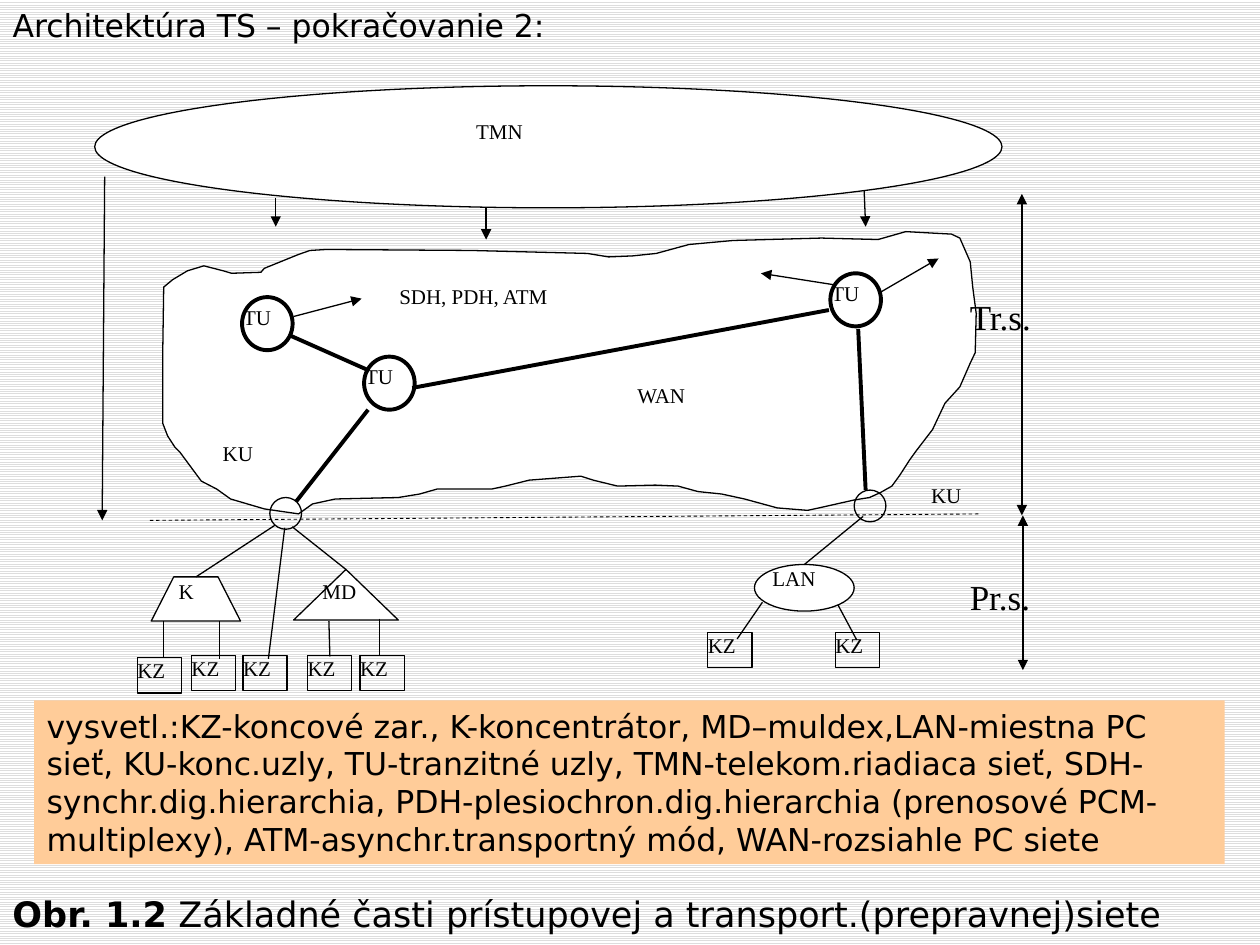
from lxml import etree
from pptx import Presentation
from pptx import util as u
from pptx.dml.color import RGBColor
from pptx.enum import dml, shapes, text
from pptx.oxml.ns import qn

BLACK, WHITE, PEACH, GREY = "000000", "FFFFFF", "FFCC99", "DDDDDD"
SERIF, SANS = "Times New Roman", "DejaVu Sans"
THIN, THICK = 0.75, 2.25
OVAL = shapes.MSO_SHAPE.OVAL
RECTANGLE = shapes.MSO_SHAPE.RECTANGLE

# Outline of the transport network cloud, clockwise from the upper left
CLOUD = [
    (1.3, 2.28), (1.37, 2.22), (1.49, 2.15), (1.62, 2.11), (1.77, 2.15),
    (1.84, 2.17), (2.07, 2.16), (2.1, 2.13), (2.37, 2.02), (2.46, 1.99),
    (2.59, 1.98), (3.74, 1.99), (4.66, 2.01), (4.83, 2.04), (5.02, 2.03),
    (5.21, 2.01), (5.47, 1.94), (5.82, 1.91), (6.52, 1.89), (6.97, 1.9),
    (7.19, 1.84), (7.4, 1.85), (7.55, 1.86), (7.62, 1.89), (7.7, 2.08),
    (7.72, 2.28), (7.75, 2.49), (7.74, 2.8), (7.7, 2.88), (7.62, 3.07),
    (7.5, 3.2), (7.4, 3.41), (7.27, 3.58), (7.22, 3.65), (7.14, 3.77),
    (7.08, 3.86), (6.99, 3.91), (6.9, 3.95), (6.78, 3.97), (6.5, 4.03),
    (6.41, 4.05), (6.17, 4.03), (5.91, 3.96), (5.73, 3.92), (5.54, 3.9),
    (5.38, 3.86), (5.2, 3.85), (4.9, 3.86), (4.71, 3.81), (4.61, 3.78),
    (4.2, 3.81), (4.01, 3.86), (3.9, 3.88), (3.47, 3.88), (3.33, 3.92),
    (3.16, 3.95), (2.66, 3.96), (2.48, 4), (2.37, 4.08), (2.1, 4.04),
    (1.83, 3.96), (1.72, 3.88), (1.6, 3.82), (1.43, 3.59), (1.39, 3.55),
    (1.33, 3.46), (1.29, 3.36), (1.29, 2.84), (1.3, 2.31),
]


def length(inches):
    return u.Cm(round(inches * 2.54, 2))


def color(code):
    return RGBColor.from_string(code)


def style_font(span, size, name, bold=False):
    span.font.size, span.font.name, span.font.bold = u.Pt(size), name, bold
    span.font.color.rgb = color(BLACK)


def write(frame, words, size, name):
    frame.text = words
    frame.word_wrap = True
    frame.vertical_anchor = text.MSO_ANCHOR.TOP
    para = frame.paragraphs[0]
    para.alignment = text.PP_ALIGN.LEFT
    for span in para.runs:
        style_font(span, size, name)
    return para


def finish(shape, fill=None, weight=None):
    shape.shadow.inherit = False
    if fill:
        shape.fill.solid()
        shape.fill.fore_color.rgb = color(fill)
    else:
        shape.fill.background()
    if weight:
        shape.line.color.rgb = color(BLACK)
        shape.line.width = u.Pt(weight)
    else:
        shape.line.fill.background()
    return shape


def add_figure(page, kind, place, fill=None, weight=THIN):
    shape = page.shapes.add_shape(kind, *map(length, place))
    return finish(shape, fill, weight)


def add_label(page, words, place, size=12, name=SERIF):
    box = page.shapes.add_textbox(*map(length, place))
    return write(box.text_frame, words, size, name)


def add_line(page, start, end, weight=THIN, heads=(), dashed=False, target=None):
    line = page.shapes.add_connector(
        shapes.MSO_CONNECTOR.STRAIGHT, *map(length, start + end))
    if target is not None:
        line.end_connect(target, 0)
    line.line.color.rgb = color(BLACK)
    line.line.width = u.Pt(weight)
    if dashed:
        line.line.dash_style = dml.MSO_LINE.DASH
    outline = line.line._get_or_add_ln()
    for head in heads:
        etree.SubElement(outline, qn(f"a:{head}"), type="triangle")
    etree.SubElement(line._element.spPr, qn("a:effectLst"))


def add_cloud(page):
    points = [(length(x), length(y)) for x, y in CLOUD]
    builder = page.shapes.build_freeform(*points[0])
    builder.add_line_segments(points[1:], close=True)
    finish(builder.convert_to_shape(), WHITE, THIN)


def add_terminal(page, left, top):
    box = add_figure(page, RECTANGLE, (left, top, 0.35, 0.28))
    frame = box.text_frame
    frame.margin_left = frame.margin_right = 0
    frame.margin_top = frame.margin_bottom = 0
    write(frame, "KZ", 12, SERIF)


def add_transport_network(page):
    add_cloud(page)
    add_figure(page, OVAL, (0.75, 0.68, 7.2, 0.97), WHITE)
    # Management arrows
    for start, end in [((2.19, 1.57), (2.19, 1.8)), ((3.86, 1.65), (3.86, 1.9)),
                       ((6.86, 1.51), (6.87, 1.8)), ((0.83, 1.4), (0.81, 4.13)),
                       ((2.33, 2.51), (2.87, 2.37)), ((6.62, 2.26), (6.04, 2.17)),
                       ((6.99, 2.32), (7.45, 2.05))]:
        add_line(page, start, end, heads=["tailEnd"])
    # Transit nodes and end nodes
    for left, top in [(2.89, 2.83), (1.92, 2.36), (6.59, 2.17)]:
        add_figure(page, OVAL, (left, top, 0.4, 0.42), weight=THICK)
        add_label(page, "TU", (left - 0.09, top + 0.01, 0.67, 0.49))
    for left, top in [(2.14, 3.95), (6.78, 3.89)]:
        add_figure(page, OVAL, (left, top, 0.25, 0.25))
    # Trunk links
    for start, end in [((2.3, 2.66), (2.93, 2.94)), ((3.27, 3.08), (6.58, 2.46)),
                       ((6.81, 2.61), (6.87, 3.89)), ((2.35, 3.98), (2.92, 3.25))]:
        add_line(page, start, end, THICK)
    for words, place in [("TMN", (3.68, 0.89, 0.87, 0.54)),
                         ("KU", (1.67, 3.45, 0.67, 0.4)),
                         ("KU", (7.29, 3.78, 0.67, 0.4)),
                         ("SDH, PDH, ATM", (3.07, 2.2, 2.18, 0.55)),
                         ("WAN", (4.96, 2.99, 0.87, 0.55))]:
        add_label(page, words, place)


def add_access_network(page):
    # Concentrator, muldex and local network
    concentrator = add_figure(
        page, shapes.MSO_SHAPE.TRAPEZOID, (1.2, 4.58, 0.71, 0.35), WHITE)
    concentrator.adjustments[0] = 0.51
    muldex = add_figure(
        page, shapes.MSO_SHAPE.ISOSCELES_TRIANGLE, (2.33, 4.52, 0.83, 0.4), WHITE)
    lan = add_figure(page, OVAL, (5.99, 4.48, 0.79, 0.37), WHITE)
    add_label(page, "K", (1.32, 4.54, 0.49, 0.4))
    add_label(page, "MD", (2.46, 4.54, 0.67, 0.53))
    add_label(page, "LAN", (6.03, 4.44, 0.86, 0.53))
    # Links from the end nodes
    add_line(page, (2.18, 4.17), (1.55, 4.58), target=concentrator)
    add_line(page, (2.32, 4.18), (2.74, 4.52), target=muldex)
    add_line(page, (6.85, 4.1), (6.39, 4.48), target=lan)
    # Terminals and their links
    for left, top in [(1.09, 5.22), (1.52, 5.2), (1.93, 5.2), (2.44, 5.2),
                      (2.86, 5.2), (5.62, 5.02), (6.63, 5.02)]:
        add_terminal(page, left, top)
    for start, end in [((1.3, 4.93), (1.3, 5.22)), ((1.74, 4.93), (1.74, 5.23)),
                       ((2.26, 4.19), (2.13, 5.23)), ((2.61, 4.93), (2.62, 5.21)),
                       ((3.01, 4.91), (3.01, 5.2)), ((6.05, 4.78), (5.85, 5.07)),
                       ((6.65, 4.8), (6.8, 5.08))]:
        add_line(page, start, end)


def add_ranges(page):
    add_line(page, (1.19, 4.13), (7.77, 4.08), 0.5, dashed=True)
    for x, top, bottom in [(8.11, 1.54, 4.09), (8.12, 4.09, 5.32)]:
        add_line(page, (x, top), (x, bottom), heads=["headEnd", "tailEnd"])
    add_label(page, "Tr.s.", (7.6, 2.3, 0.79, 0.49), 20)
    add_label(page, "Pr.s.", (7.6, 4.52, 0.79, 0.42), 20)


def add_legend(page):
    box = add_figure(page, RECTANGLE, (0.27, 5.56, 9.45, 1.3), PEACH, None)
    write(box.text_frame,
          "vysvetl.:KZ-koncové zar., K-koncentrátor, MD–muldex,LAN-miestna PC sieť, "
          "KU-konc.uzly, TU-tranzitné uzly, TMN-telekom.riadiaca sieť, "
          "SDH-synchr.dig.hierarchia, PDH-plesiochron.dig.hierarchia "
          "(prenosové PCM-multiplexy), ATM-asynchr.transportný mód, "
          "WAN-rozsiahle PC siete", 18, SANS)


def main():
    deck = Presentation()
    deck.slide_width, deck.slide_height = length(10), length(7.5)
    page = deck.slides.add_slide(deck.slide_layouts[5])

    # Striped background
    fill = page.background.fill
    fill.patterned()
    fill.pattern = dml.MSO_PATTERN.LIGHT_HORIZONTAL
    fill.fore_color.rgb, fill.back_color.rgb = color(GREY), color(WHITE)

    # Title
    title = page.shapes.title
    title.left, title.top, title.width, title.height = map(length, (0, 0, 4.76, 0.4))
    write(title.text_frame, "Architektúra TS – pokračovanie 2:", 18, SANS)
    title.text_frame.auto_size = text.MSO_AUTO_SIZE.NONE

    add_transport_network(page)
    add_access_network(page)
    add_ranges(page)
    add_legend(page)

    # Caption
    caption = add_label(page, "Obr. 1.2", (0, 7.03, 10, 0.47), 20, SANS)
    caption.runs[0].font.bold = True
    span = caption.add_run()
    span.text = " Základné časti prístupovej a transport.(prepravnej)siete"
    style_font(span, 20, SANS)
    deck.save("out.pptx")


if __name__ == "__main__":
    main()
